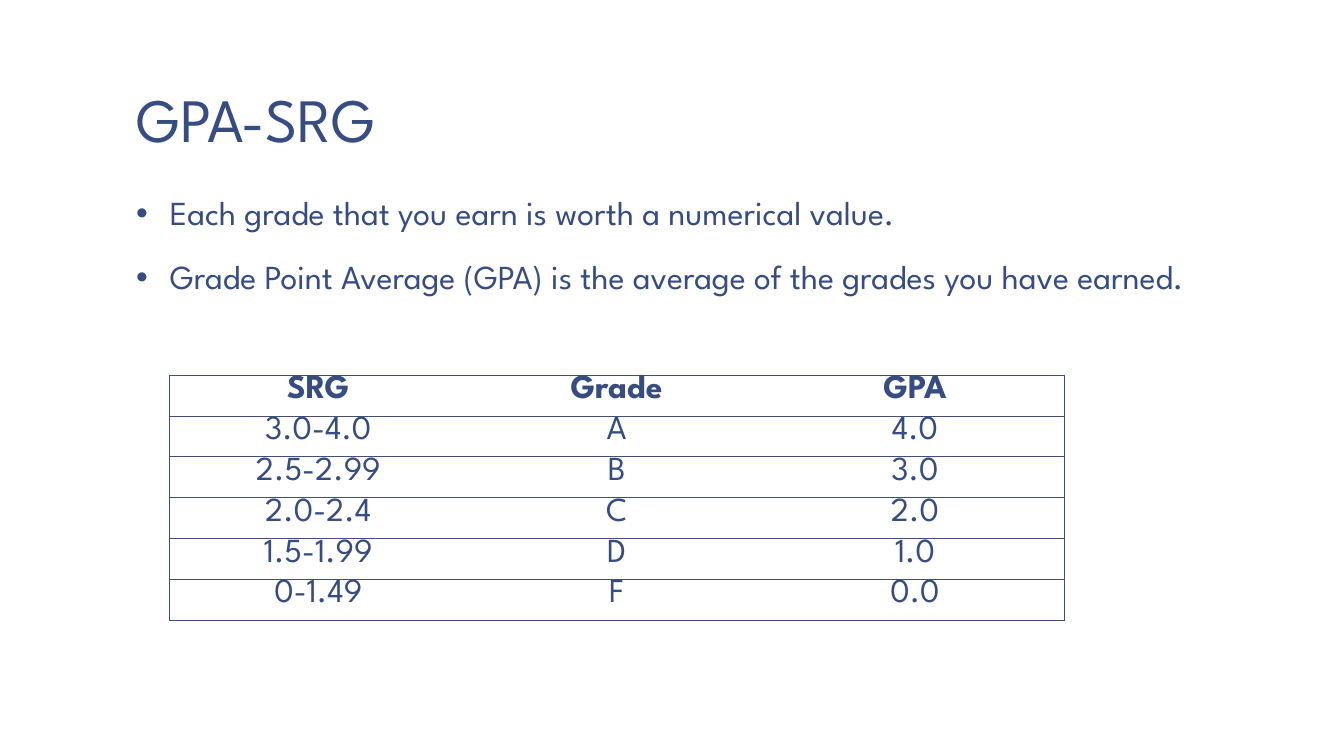
"""Build the GPA-SRG slide with its bullet points and grade table."""
import pptx
import pptx.dml.color
import pptx.enum.text
import pptx.oxml
import pptx.oxml.ns
import pptx.util

Cm = pptx.util.Cm
Pt = pptx.util.Pt
NAVY = pptx.dml.color.RGBColor(0x37, 0x4C, 0x81)
RULE = pptx.dml.color.RGBColor(0x41, 0x4E, 0x77)
WHITE = pptx.dml.color.RGBColor(0xFF, 0xFF, 0xFF)

TITLE_FONT = {"name": "League Spartan", "size": Pt(44), "bold": False}
BODY_FONT = {**TITLE_FONT, "size": Pt(24)}
HEADER_FONT = {**BODY_FONT, "bold": True}
FRAME_FORMAT = {
    "word_wrap": True,
    "margin_left": Cm(0.33),
    "margin_right": Cm(0.33),
    "margin_top": Cm(0.18),
    "margin_bottom": Cm(0.18),
}
CELL_FORMAT = {"margin_top": Cm(0), "margin_bottom": Cm(0)}
BULLETS = [
    "Each grade that you earn is worth a numerical value.",
    "Grade Point Average (GPA) is the average of the grades you have earned.",
]
GRADES = [
    ("SRG", "Grade", "GPA"),
    ("3.0-4.0", "A", "4.0"),
    ("2.5-2.99", "B", "3.0"),
    ("2.0-2.4", "C", "2.0"),
    ("1.5-1.99", "D", "1.0"),
    ("0-1.49", "F", "0.0"),
]
COLUMN_WIDTH = Cm(7.52)
ROW_HEIGHT = Cm(1.03)


def apply_format(target, values):
    """Set every attribute named in values on the target."""
    for name, value in values.items():
        setattr(target, name, value)


def write_paragraph(paragraph, text, font_format, paragraph_format):
    """Fill a paragraph with formatted navy text."""
    paragraph.text = text
    apply_format(paragraph, paragraph_format)
    font = paragraph.runs[0].font
    apply_format(font, font_format)
    font.color.rgb = NAVY


def add_bullet(paragraph):
    """Give a paragraph a round bullet with a hanging indent."""
    properties = paragraph._p.get_or_add_pPr()
    properties.set("marL", str(Cm(0.85)))
    properties.set("indent", str(-Cm(0.85)))
    namespace = pptx.oxml.ns.nsdecls("a")
    for markup in ('<a:buFont {} typeface="Arial"/>', '<a:buChar {} char="•"/>'):
        properties.append(pptx.oxml.parse_xml(markup.format(namespace)))


def add_text_frame(slide, top, height, anchor):
    """Add a text box at the slide's text margins and return its frame."""
    shape = slide.shapes.add_textbox(Cm(3.1), top, Cm(28.22), height)
    apply_format(shape.text_frame, {**FRAME_FORMAT, "vertical_anchor": anchor})
    return shape.text_frame


def add_title(slide, text):
    """Add the slide title."""
    frame = add_text_frame(slide, Cm(0.2), Cm(3.89), pptx.enum.text.MSO_ANCHOR.BOTTOM)
    write_paragraph(frame.paragraphs[0], text, TITLE_FONT, {"line_spacing": 0.85})


def add_bullet_list(slide, lines):
    """Add the bullet points, spaced after the first one."""
    frame = add_text_frame(slide, Cm(4.72), Cm(12.42), pptx.enum.text.MSO_ANCHOR.TOP)
    for index, line in enumerate(lines):
        paragraph = frame.add_paragraph() if index else frame.paragraphs[0]
        add_bullet(paragraph)
        spacing = {"line_spacing": 0.95, "space_before": Pt(18.7 if index else 0)}
        write_paragraph(paragraph, line, BODY_FONT, spacing)


def set_borders(cell, visible_sides):
    """Draw the visible sides of a cell and clear the others."""
    properties = cell._tc.get_or_add_tcPr()
    namespace = pptx.oxml.ns.nsdecls("a")
    for position, side in enumerate("LRTB"):
        paint = "<a:noFill/>"
        if side in visible_sides:
            paint = f'<a:solidFill><a:srgbClr val="{RULE}"/></a:solidFill>'
        markup = f'<a:ln{side} {namespace} w="{Pt(0.5)}">{paint}</a:ln{side}>'
        properties.insert(position, pptx.oxml.parse_xml(markup))


def add_grade_table(slide, rows):
    """Add the grade table with an outer frame and row rules."""
    column_count = len(rows[0])
    table = slide.shapes.add_table(
        len(rows), column_count, Cm(4.26), Cm(9.45),
        COLUMN_WIDTH * column_count, ROW_HEIGHT * len(rows),
    ).table
    apply_format(table, {"first_row": False, "horz_banding": False})
    centred = {"alignment": pptx.enum.text.PP_ALIGN.CENTER}
    for row_index, row in enumerate(rows):
        font_format = BODY_FONT if row_index else HEADER_FONT
        for column_index, text in enumerate(row):
            cell = table.cell(row_index, column_index)
            apply_format(cell, CELL_FORMAT)
            cell.fill.background()
            write_paragraph(cell.text_frame.paragraphs[0], text, font_format, centred)
            left = "L" if column_index == 0 else ""
            right = "R" if column_index == column_count - 1 else ""
            set_borders(cell, "TB" + left + right)


def main():
    """Create the presentation and save it."""
    presentation = pptx.Presentation()
    apply_format(presentation, {"slide_width": Cm(33.87), "slide_height": Cm(19.05)})
    slide = presentation.slides.add_slide(presentation.slide_layouts[6])
    slide.background.fill.solid()
    slide.background.fill.fore_color.rgb = WHITE
    add_title(slide, "GPA-SRG")
    add_bullet_list(slide, BULLETS)
    add_grade_table(slide, GRADES)
    presentation.save("out.pptx")


if __name__ == "__main__":
    main()
